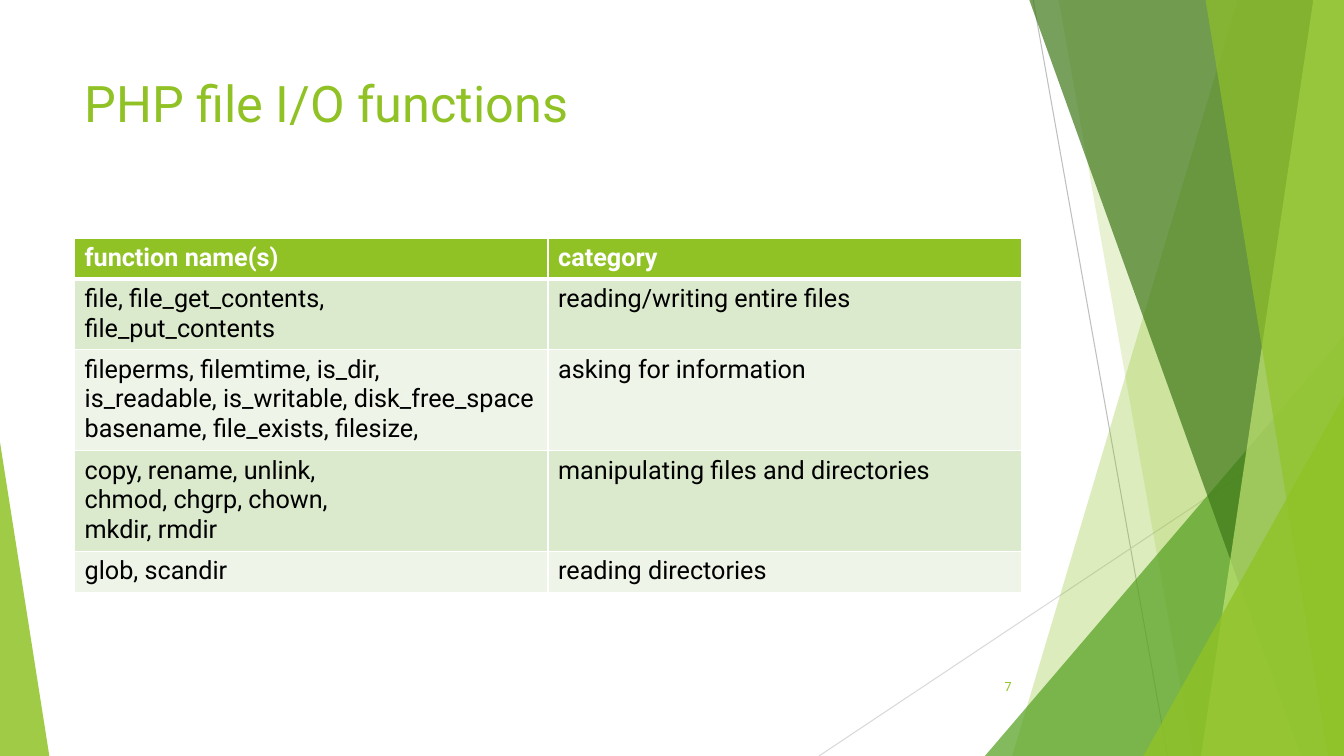
from lxml import etree
from pptx import Presentation
from pptx import util as u
from pptx.dml.color import RGBColor
from pptx.enum import shapes, text
from pptx.oxml import ns

PX = 9525
WIDTH, HEIGHT = 1280, 720
FONT = "Roboto"
COLOURS = {
    "lime": "90C226", "leaf": "54A021", "forest": "3F7819", "pale": "C0E474",
    "grey": "BFBFBF", "light grey": "D9D9D9", "white": "FFFFFF", "black": "000000",
    "band": "DBE9CD", "light band": "EEF4E8",
}
LINES = [((984, 0), (1112, HEIGHT), "grey"), ((WIDTH, 387), (780, HEIGHT), "light grey")]
# Top left x, bottom left x, colour, opacity; each panel runs to the right edge.
BACK_PANELS = [(1179, 964, "lime", 30), (1008, 1136, "lime", 20)]
FRONT_PANELS = [(980, 1239, "forest", 70), (1251, 1144, "pale", 70), (1148, 1265, "lime", 65)]
ROWS = [
    ("function name(s)", "category"),
    ("file, file_get_contents, \vfile_put_contents", "reading/writing entire files"),
    ("fileperms, filemtime, is_dir, \vis_readable, is_writable, disk_free_space\n"
     "basename, file_exists, filesize,", "asking for information"),
    ("copy, rename, unlink, \vchmod, chgrp, chown, \vmkdir, rmdir",
     "manipulating files and directories"),
    ("glob, scandir", "reading directories"),
]


def px(*values):
    return [u.Emu(value * PX) for value in values]


def rgb(name):
    return RGBColor.from_string(COLOURS[name])


def paint(shape, colour, opacity):
    shape.shadow.inherit = False
    shape.line.fill.background()
    shape.fill.solid()
    shape.fill.fore_color.rgb = rgb(colour)
    colour_node = shape.fill._xPr.find(".//" + ns.qn("a:srgbClr"))
    etree.SubElement(colour_node, ns.qn("a:alpha"), val=str(opacity * 1000))


def add_line(page, start, end, colour):
    line = page.shapes.add_connector(shapes.MSO_CONNECTOR.STRAIGHT, *px(*start, *end))
    line.line.color.rgb = rgb(colour)
    line.line.width = u.Pt(0.75)
    etree.SubElement(line._element.spPr, ns.qn("a:effectLst"))


def add_panel(page, top_x, bottom_x, colour, opacity):
    builder = page.shapes.build_freeform(top_x, -1, scale=PX)
    builder.add_line_segments([(WIDTH, -1), (WIDTH, HEIGHT), (bottom_x, HEIGHT)], close=True)
    paint(builder.convert_to_shape(), colour, opacity)


def add_corner(page, left, top, width, peak, colour, opacity):
    """Right triangle standing on the bottom edge; peak is 0 for left, 1 for right."""
    corner = page.shapes.add_shape(
        shapes.MSO_SHAPE.ISOSCELES_TRIANGLE, *px(left, top, width, HEIGHT - top))
    corner.adjustments[0] = peak
    paint(corner, colour, opacity)


def format_text(frame, size, colour, bold=False, align=text.PP_ALIGN.LEFT):
    for para in frame.paragraphs:
        para.alignment = align
        for span in para.runs:
            span.font.name = FONT
            span.font.size = u.Pt(size)
            span.font.bold = bold
            span.font.color.rgb = rgb(colour)


def add_text(page, bounds, words, size, anchor, align):
    box = page.shapes.add_textbox(*px(*bounds))
    frame = box.text_frame
    frame.word_wrap = True
    frame.vertical_anchor = anchor
    frame.text = words
    format_text(frame, size, "lime", align=align)


def set_borders(cell, top, bottom):
    """White borders: 1 pt at the sides, the given points above and below."""
    properties = cell._tc.get_or_add_tcPr()
    for side, points in (("L", 1), ("R", 1), ("T", top), ("B", bottom)):
        border = etree.SubElement(properties, ns.qn("a:ln" + side), w=str(u.Pt(points)))
        fill = etree.SubElement(border, ns.qn("a:solidFill"))
        etree.SubElement(fill, ns.qn("a:srgbClr"), val=COLOURS["white"])


def add_function_table(page):
    bounds = px(71, 227, 902, 39 * len(ROWS))
    table = page.shapes.add_table(len(ROWS), 2, *bounds).table
    table.horz_banding = False
    for row, entries in enumerate(ROWS):
        header = row == 0
        band = "lime" if header else "band" if row % 2 else "light band"
        for column, words in enumerate(entries):
            cell = table.cell(row, column)
            set_borders(cell, 3 if row == 1 else 1, 3 if header else 1)
            cell.fill.solid()
            cell.fill.fore_color.rgb = rgb(band)
            cell.text_frame.text = words
            format_text(cell.text_frame, 18, "white" if header else "black", header)


def main():
    deck = Presentation()
    deck.slide_width, deck.slide_height = px(WIDTH, HEIGHT)
    page = deck.slides.add_slide(deck.slide_layouts[6])
    for line in LINES:
        add_line(page, *line)
    for panel in BACK_PANELS:
        add_panel(page, *panel)
    add_corner(page, 938, 320, 342, 1, "leaf", 72)
    for panel in FRONT_PANELS:
        add_panel(page, *panel)
    add_corner(page, 1089, 377, 191, 1, "lime", 80)
    add_corner(page, 0, 421, 47, 0, "lime", 85)
    add_text(page, (71, 64, 902, 138), "PHP file I/O functions", 36,
             text.MSO_ANCHOR.TOP, text.PP_ALIGN.LEFT)
    add_text(page, (901, 635, 72, 38), "7", 9, text.MSO_ANCHOR.MIDDLE, text.PP_ALIGN.RIGHT)
    add_function_table(page)
    deck.save("out.pptx")


if __name__ == "__main__":
    main()
